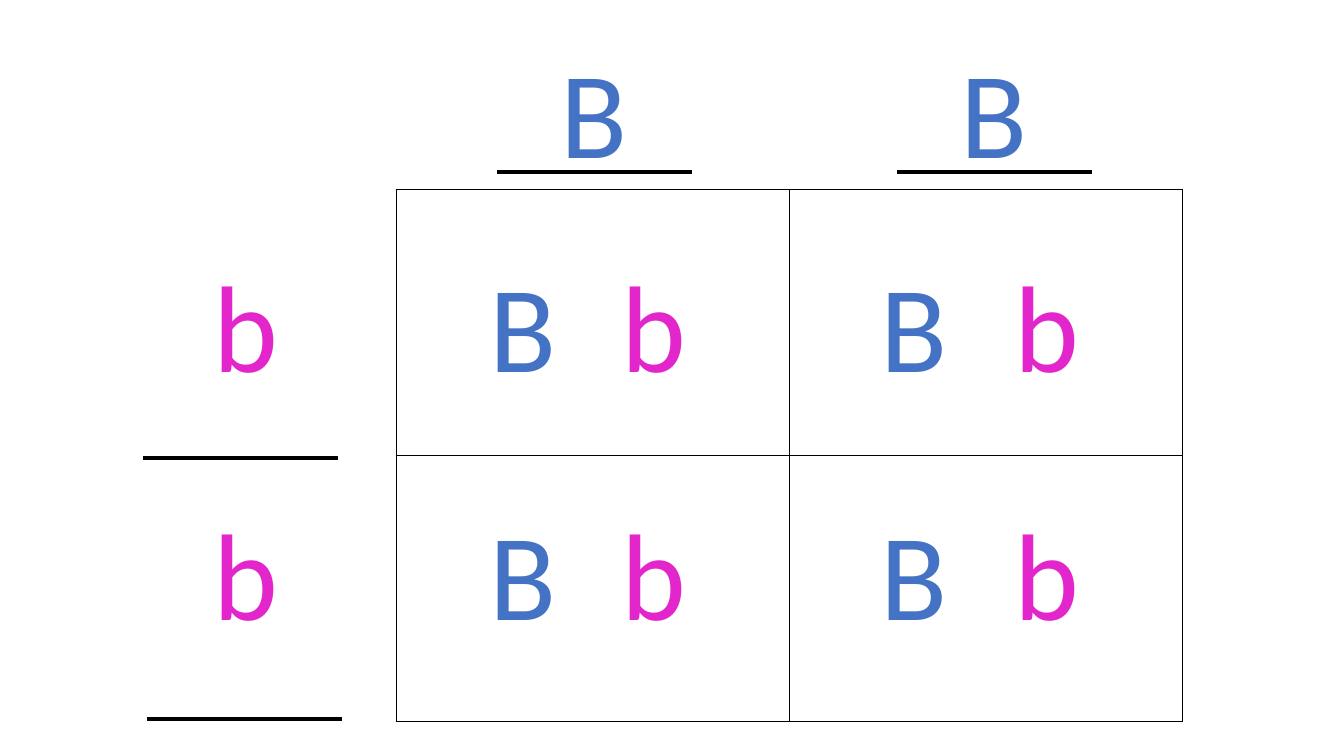
"""Build a Punnett square slide crossing BB with bb."""
from lxml import etree
from pptx import Presentation
from pptx import util as u
from pptx.dml.color import RGBColor
from pptx.enum import shapes, text
from pptx.oxml import ns

BLACK = RGBColor(0x00, 0x00, 0x00)
BLUE = RGBColor(0x44, 0x72, 0xC4)
PINK = RGBColor(0xE3, 0x25, 0xCC)

ROW_TOPS = (2.42, 4.88)
DOMINANT_LEFTS = (4.75, 8.63)
RECESSIVE_LEFTS = (6.05, 9.95)
HEADER_LEFTS = (5.46, 9.42)
SIDE_LEFT = 2
HEADER_TOP = 0.3
BLANK_WIDTH = 1.93


def add_allele(page, letter, color, left, top):
    box = page.shapes.add_textbox(u.Inches(left), u.Inches(top), u.Inches(0.87), u.Inches(1.58))
    frame = box.text_frame
    frame.word_wrap = False
    frame.auto_size = text.MSO_AUTO_SIZE.SHAPE_TO_FIT_TEXT
    para = frame.paragraphs[0]
    para.alignment = text.PP_ALIGN.CENTER
    span = para.add_run()
    span.text = letter
    span.font.size = u.Pt(88)
    span.font.name = "Calibri"
    span.font.color.rgb = color


def add_border(cell, side):
    properties = cell._tc.get_or_add_tcPr()
    border = etree.SubElement(properties, ns.qn(f"a:{side}"), w=str(u.Pt(1)))
    fill = etree.SubElement(border, ns.qn("a:solidFill"))
    etree.SubElement(fill, ns.qn("a:srgbClr"), val=str(BLACK))


deck = Presentation()
deck.slide_width = u.Inches(13.33)
deck.slide_height = u.Inches(7.5)
page = deck.slides.add_slide(deck.slide_layouts[6])

square = page.shapes.add_table(
    2, 2, u.Inches(3.93), u.Inches(1.88), u.Inches(7.8), u.Inches(5.28)
).table
square.first_row = False
square.horz_banding = False
for cell in square.iter_cells():
    for side in ("lnL", "lnR", "lnT", "lnB"):
        add_border(cell, side)
    cell.fill.background()

for left, y in ((1.42, 4.54), (1.46, 7.13), (4.93, 1.71), (8.9, 1.71)):
    blank = page.shapes.add_connector(
        shapes.MSO_CONNECTOR.STRAIGHT,
        u.Inches(left + BLANK_WIDTH), u.Inches(y), u.Inches(left), u.Inches(y),
    )
    blank.line.color.rgb = BLACK
    blank.line.width = u.Pt(3)
    etree.SubElement(blank._element.spPr, ns.qn("a:effectLst"))

for left in HEADER_LEFTS:
    add_allele(page, "B", BLUE, left, HEADER_TOP)

for top in ROW_TOPS:
    add_allele(page, "b", PINK, SIDE_LEFT, top)
    for dominant_left, recessive_left in zip(DOMINANT_LEFTS, RECESSIVE_LEFTS):
        add_allele(page, "B", BLUE, dominant_left, top)
        add_allele(page, "b", PINK, recessive_left, top)

deck.save("out.pptx")
